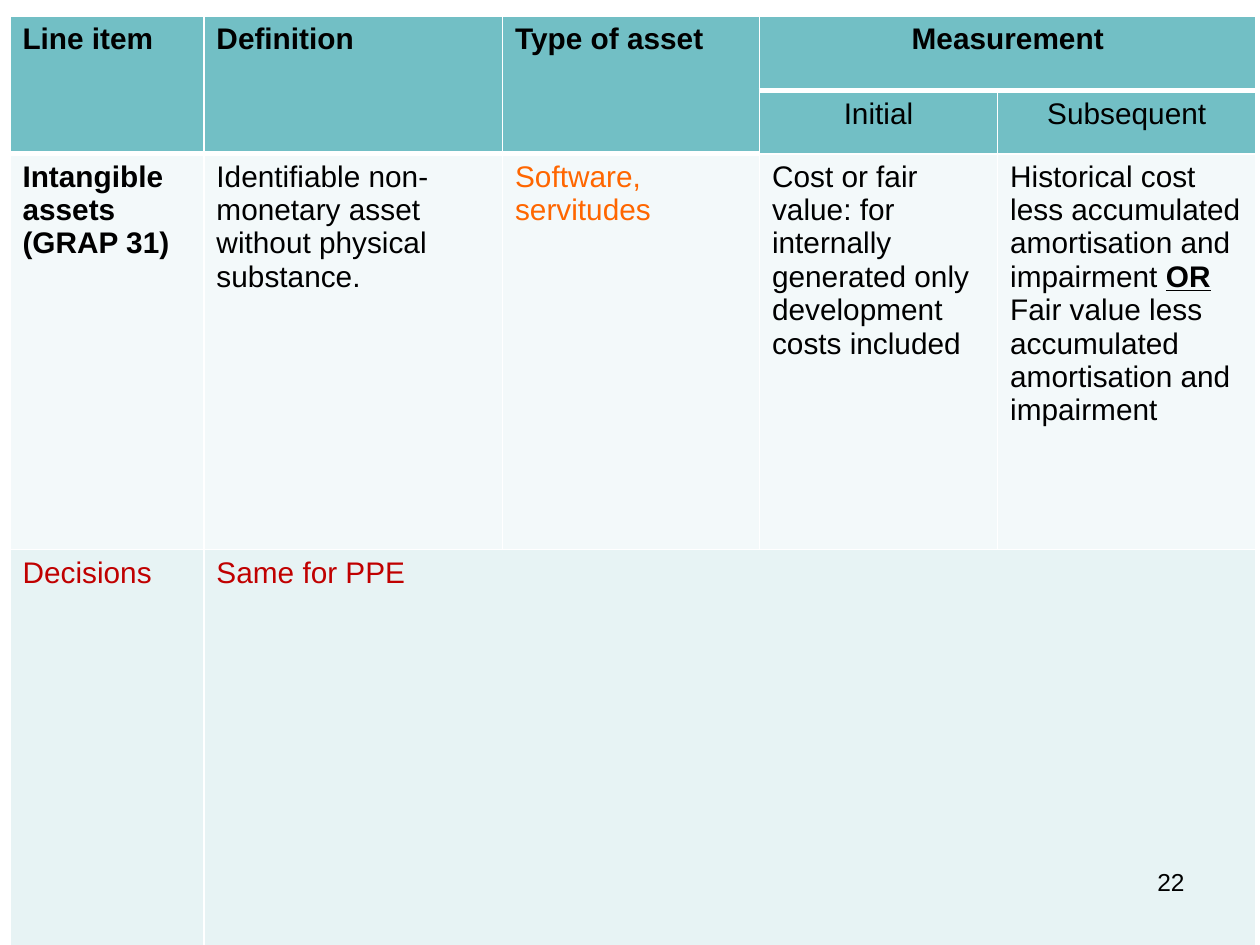
from dataclasses import dataclass

from lxml import etree
from pptx import Presentation
from pptx import util as u
from pptx.dml.color import RGBColor
from pptx.enum import text
from pptx.oxml import ns


@dataclass(frozen=True)
class Theme:
    font: str = "Arial"
    body: int = 17
    page_number: int = 14
    ink: str = "000000"
    example: str = "FF6600"
    decision: str = "C00000"
    border: str = "FFFFFF"
    header: str = "72BFC5"
    light: str = "F3F9FA"
    tint: str = "E7F3F4"


THEME = Theme()
COLUMN_WIDTHS = [3.91, 6.02, 5.18, 4.8, 5.21]
ROW_HEIGHTS = [1.5, 1.27, 7.98, 7.98]
ROW_FILLS = [THEME.header, THEME.header, THEME.light, THEME.tint]
MERGES = [(0, 0, 1, 0), (0, 1, 1, 1), (0, 2, 1, 2), (0, 3, 0, 4), (3, 1, 3, 4)]

BOLD = {"bold": True}
CENTER = {"align": text.PP_ALIGN.CENTER}
DECISION = {"color": THEME.decision}
CONTENT = [
    (0, 0, ["Line item"], BOLD),
    (0, 1, ["Definition"], BOLD),
    (0, 2, ["Type of asset"], BOLD),
    (0, 3, ["Measurement"], BOLD | CENTER),
    (1, 3, ["Initial"], CENTER),
    (1, 4, ["Subsequent"], CENTER),
    (2, 0, ["Intangible assets", "(GRAP 31)"], BOLD),
    (2, 1, ["Identifiable non-monetary asset without physical substance."], {}),
    (2, 2, ["Software, servitudes"], {"color": THEME.example}),
    (2, 3, ["Cost or fair value: for internally generated only "
            "development costs included"], {}),
    (2, 4, ["Historical cost less accumulated amortisation and impairment ",
            "Fair value less accumulated amortisation and impairment"], {}),
    (3, 0, ["Decisions"], DECISION),
    (3, 1, ["Same for PPE"], DECISION),
]


def add_run(paragraph, words, size=THEME.body, color=THEME.ink, bold=False, underline=False):
    run = paragraph.add_run()
    run.text = words
    font = run.font
    font.name, font.size = THEME.font, u.Pt(size)
    font.bold, font.underline = bold, underline
    font.color.rgb = RGBColor.from_string(color)


def write_text(frame, lines, align=text.PP_ALIGN.LEFT, **run_format):
    for index, words in enumerate(lines):
        paragraph = frame.add_paragraph() if index else frame.paragraphs[0]
        paragraph.alignment = align
        add_run(paragraph, words, **run_format)


def set_borders(cell, bottom):
    properties = cell._tc.get_or_add_tcPr()
    sides = [("lnL", 1), ("lnR", 1), ("lnT", 1), ("lnB", bottom)]
    for index, (side, width) in enumerate(sides):
        line = etree.Element(ns.qn(f"a:{side}"), w=str(u.Pt(width)))
        fill = etree.SubElement(line, ns.qn("a:solidFill"))
        etree.SubElement(fill, ns.qn("a:srgbClr"), val=THEME.border)
        properties.insert(index, line)


def style_cell(cell, fill, bottom):
    cell.fill.solid()
    cell.fill.fore_color.rgb = RGBColor.from_string(fill)
    set_borders(cell, bottom)


def add_asset_table(slide):
    frame = slide.shapes.add_table(
        len(ROW_HEIGHTS), len(COLUMN_WIDTHS), u.Cm(0.2), u.Cm(0.33),
        u.Cm(sum(COLUMN_WIDTHS)), u.Cm(sum(ROW_HEIGHTS)))
    table = frame.table
    for column, width in zip(table.columns, COLUMN_WIDTHS):
        column.width = u.Cm(width)
    for row_index, (row, height) in enumerate(zip(table.rows, ROW_HEIGHTS)):
        row.height = u.Cm(height)
        for column_index, cell in enumerate(row.cells):
            heavy = row_index == 0 or (row_index == 1 and column_index < 3)
            style_cell(cell, ROW_FILLS[row_index], 3 if heavy else 1)
    for top, left, bottom, right in MERGES:
        table.cell(top, left).merge(table.cell(bottom, right))
    for row_index, column_index, lines, text_format in CONTENT:
        write_text(table.cell(row_index, column_index).text_frame, lines, **text_format)
    subsequent = table.cell(2, 4).text_frame.paragraphs[0]
    add_run(subsequent, "OR", bold=True, underline=True)


def add_page_number(slide, number):
    box = slide.shapes.add_textbox(u.Cm(18.21), u.Cm(17.35), u.Cm(5.92), u.Cm(1.32))
    box.text_frame.word_wrap = True
    write_text(box.text_frame, [number], align=text.PP_ALIGN.RIGHT, size=THEME.page_number)


def main():
    presentation = Presentation()
    presentation.slide_width, presentation.slide_height = u.Cm(25.4), u.Cm(19.05)
    slide = presentation.slides.add_slide(presentation.slide_layouts[6])
    add_asset_table(slide)
    add_page_number(slide, "22")
    presentation.save("out.pptx")


if __name__ == "__main__":
    main()
